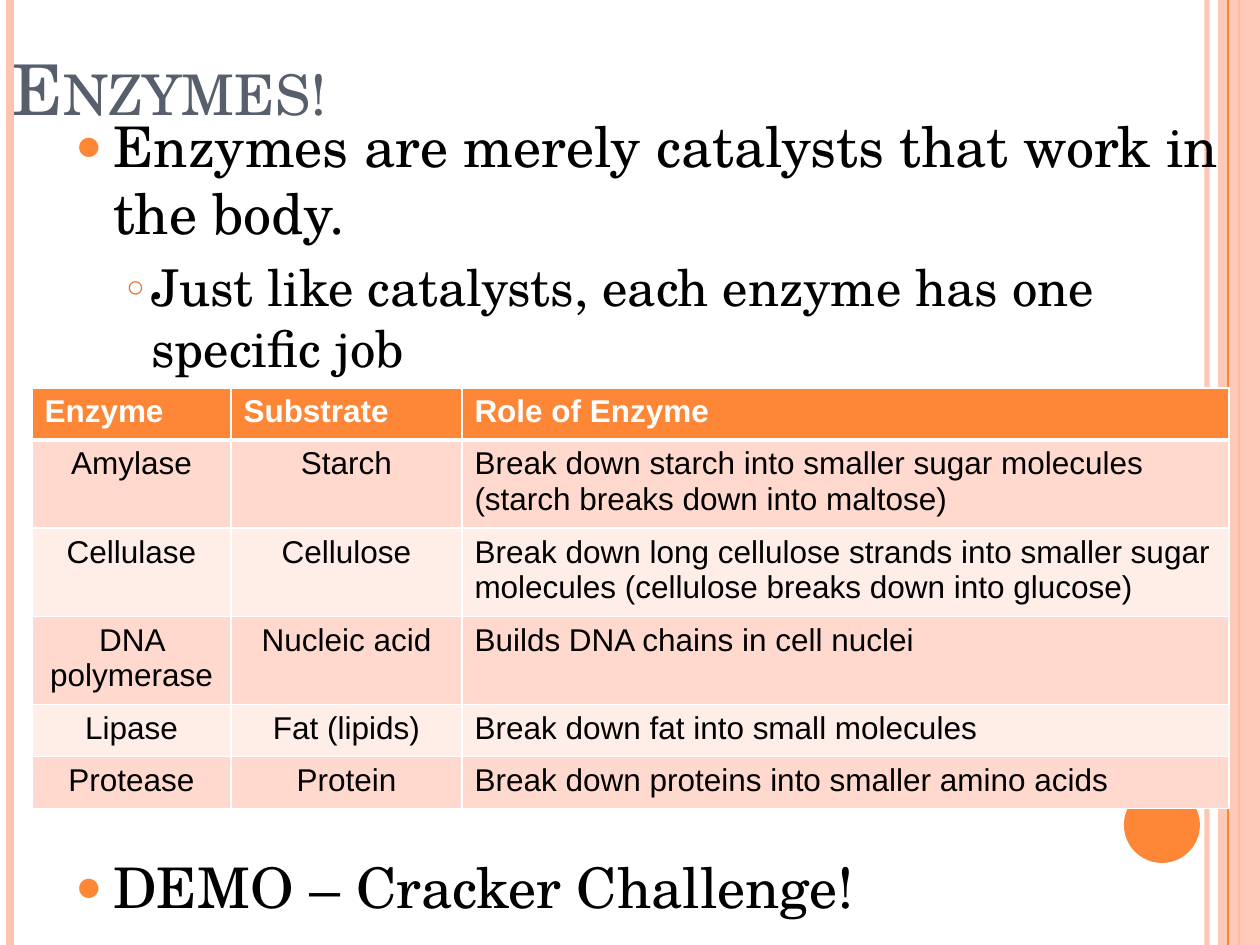
"""Build the enzymes slide with its bullets, role table and side stripes."""
import dataclasses

import lxml.etree
import pptx
import pptx.dml.color
import pptx.enum.shapes
import pptx.enum.text
import pptx.oxml.ns
import pptx.util

PX = 7257
ALIGN = pptx.enum.text.PP_ALIGN
KIND = pptx.enum.shapes.MSO_SHAPE
RGB = pptx.dml.color.RGBColor.from_string
QN = pptx.oxml.ns.qn


@dataclasses.dataclass(frozen=True)
class Theme:
    serif: str = "TeX Gyre Schola"
    sans: str = "Arial"
    orange: str = "FE8637"
    rust: str = "E0752F"
    peach: str = "FEC3AE"
    slate: str = "575F6D"
    black: str = "000000"
    white: str = "FFFFFF"
    bands: tuple = ("FFEDE8", "FFD9CE")
    title: int = 40
    main: int = 32
    sub: int = 29
    cell: int = 18


theme = Theme()


def add(node, tag, **attrs):
    child = lxml.etree.SubElement(node, QN(tag))
    for key, value in attrs.items():
        child.set(key, str(value))
    return child


def write(par, text, size, color=theme.black, font=theme.serif, bold=False,
          align=ALIGN.LEFT, small=False, gap=0):
    par.alignment = align
    par.space_before = pptx.util.Pt(gap)
    run = par.add_run()
    run.text = text
    run.font.size = pptx.util.Pt(size)
    run.font.name = font
    run.font.bold = bold
    run.font.color.rgb = RGB(color)
    if small:
        run.font._element.set("cap", "small")


deck = pptx.Presentation()
deck.slide_width, deck.slide_height = 1260 * PX, 945 * PX
slide = deck.slides.add_slide(deck.slide_layouts[5])
shapes = slide.shapes

# x, width in points, colour, opacity in percent
stripes = [
    (1207, 3, theme.peach, 93),
    (10, 4.5, theme.peach, 100),
    (1239, 1.5, theme.orange, 100),
    (1228, 0.75, theme.orange, 100),
]
lines = []
for x, width, color, alpha in stripes:
    line = shapes.add_connector(
        pptx.enum.shapes.MSO_CONNECTOR.STRAIGHT, x * PX, 0, x * PX, 945 * PX)
    line.line.color.rgb = RGB(color)
    line.line.width = pptx.util.Pt(width)
    add(line.element.spPr, "a:effectLst")
    if alpha < 100:
        tint = line.element.spPr.find(".//" + QN("a:srgbClr"))
        add(tint, "a:alpha", val=alpha * 1000)
    lines.append(line)

band = shapes.add_shape(KIND.RECTANGLE, 1218 * PX, 0, 42 * PX, 945 * PX)
dot = shapes.add_shape(KIND.OVAL, 1124 * PX, 787 * PX, 76 * PX, 76 * PX)
for shape, color in ((band, theme.peach), (dot, theme.orange)):
    shape.shadow.inherit = False
    shape.fill.solid()
    shape.fill.fore_color.rgb = RGB(color)
    shape.line.fill.background()
add(band.element.spPr.find(".//" + QN("a:srgbClr")), "a:alpha", val=87000)
lines[2].begin_connect(band, 0)
lines[2].end_connect(band, 2)
lines[3].element.addprevious(band.element)

title = shapes.title
title.left, title.top, title.width, title.height = 0, 38 * PX, 1260 * PX, 98 * PX
title.text_frame.vertical_anchor = pptx.enum.text.MSO_ANCHOR.BOTTOM
title.text_frame.auto_size = pptx.enum.text.MSO_AUTO_SIZE.NONE
write(title.text_frame.paragraphs[0], "Enzymes!", theme.title, theme.slate, small=True)
dot.element.addnext(title.element)

body = shapes.add_textbox(63 * PX, 105 * PX, 1197 * PX, 787 * PX).text_frame
body.word_wrap = True
points = [
    ("Enzymes are merely catalysts that work in the body.", 1, 6),
    ("Just like catalysts, each enzyme has one specific job", 2, 6),
    ("DEMO – Cracker Challenge!", 1, 271),
]
levels = {
    1: (theme.main, 38, 38, theme.orange, 80, "●"),
    2: (theme.sub, 76, 25, theme.rust, 60, "○"),
}
for i, (text, level, gap) in enumerate(points):
    size, left, hang, color, scale, mark = levels[level]
    par = body.add_paragraph() if i else body.paragraphs[0]
    par.level = level - 1
    write(par, text, size, gap=gap)
    props = par._p.get_or_add_pPr()
    props.set("marL", str(left * PX))
    props.set("indent", str(-hang * PX))
    add(add(props, "a:buClr"), "a:srgbClr", val=color)
    add(props, "a:buSzPct", val=scale * 1000)
    add(props, "a:buFont", typeface=theme.sans)
    add(props, "a:buChar", char=mark)

rows = [
    ("Enzyme", "Substrate", "Role of Enzyme"),
    ("Amylase", "Starch",
     "Break down starch into smaller sugar molecules (starch breaks down into maltose)"),
    ("Cellulase", "Cellulose",
     "Break down long cellulose strands into smaller sugar molecules "
     "(cellulose breaks down into glucose)"),
    ("DNA polymerase", "Nucleic acid", "Builds DNA chains in cell nuclei"),
    ("Lipase", "Fat (lipids)", "Break down fat into small molecules"),
    ("Protease", "Protein", "Break down proteins into smaller amino acids"),
]
frame = shapes.add_table(len(rows), 3, 32 * PX, 388 * PX, 1197 * PX, 456 * PX)
table = frame.table
for col, width in zip(table.columns, (199, 231, 767)):
    col.width = width * PX
for r, row in enumerate(rows):
    table.rows[r].height = 52 * PX
    for c, text in enumerate(row):
        cell = table.cell(r, c)
        head = r == 0
        write(cell.text_frame.paragraphs[0], text, theme.cell,
              theme.white if head else theme.black, theme.sans, bold=head,
              align=ALIGN.LEFT if head or c == 2 else ALIGN.CENTER)
        props = cell._tc.get_or_add_tcPr()
        for side in "LRTB":
            thick = 3 if (r, side) in ((0, "B"), (1, "T")) else 1
            edge = add(props, "a:ln" + side, w=thick * 12700)
            add(add(edge, "a:solidFill"), "a:srgbClr", val=theme.white)
        cell.fill.solid()
        cell.fill.fore_color.rgb = RGB(theme.orange if head else theme.bands[r % 2])
frame.height = 456 * PX

deck.save("out.pptx")
